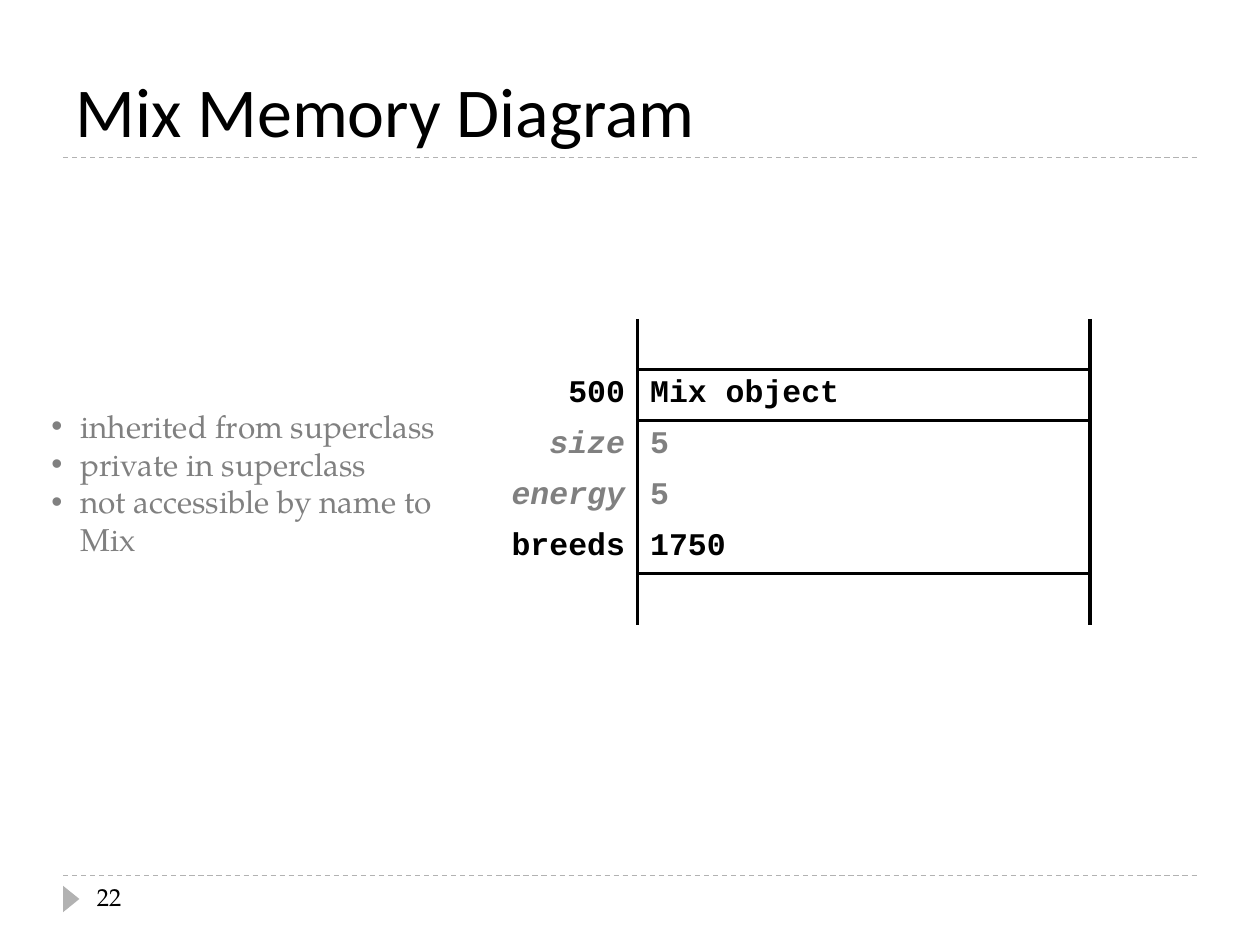
from dataclasses import dataclass

from lxml import etree
from pptx import Presentation
from pptx.dml.color import RGBColor
from pptx.enum.dml import MSO_LINE
from pptx.enum.shapes import MSO_CONNECTOR, MSO_SHAPE
from pptx.enum.text import MSO_ANCHOR, PP_ALIGN
from pptx.oxml.ns import qn
from pptx.util import Inches, Pt

DASH = MSO_LINE.DASH
STRAIGHT = MSO_CONNECTOR.STRAIGHT
TRIANGLE = MSO_SHAPE.ISOSCELES_TRIANGLE
BOTTOM = MSO_ANCHOR.BOTTOM
LEFT, RIGHT = PP_ALIGN.LEFT, PP_ALIGN.RIGHT


@dataclass(frozen=True)
class Theme:
    ink: str = "000000"
    muted: str = "808080"
    rule: str = "B2B2B2"
    heading: str = "Calibri"
    body: str = "TeX Gyre Pagella"
    code: str = "Courier New"
    title_size: int = 40
    text_size: int = 18
    number_size: int = 14
    rule_width: float = 0.75
    border_width: float = 2.25


theme = Theme()


def style(paragraph, face, size, color, bold=False, italic=False):
    for run in paragraph.runs:
        font = run.font
        font.name, font.size = face, Pt(size)
        font.bold, font.italic = bold, italic
        font.color.rgb = RGBColor.from_string(color)


def set_borders(cell, sides):
    properties = cell._tc.get_or_add_tcPr()
    for side in "LRTB":
        border = etree.SubElement(properties, qn(f"a:ln{side}"))
        if side in sides:
            border.set("w", str(Pt(theme.border_width)))
            fill = etree.SubElement(border, qn("a:solidFill"))
            etree.SubElement(fill, qn("a:srgbClr"), val=theme.ink)
        else:
            etree.SubElement(border, qn("a:noFill"))


prs = Presentation()
prs.slide_width, prs.slide_height = Inches(10), Inches(7.5)
slide = prs.slides.add_slide(prs.slide_layouts[5])
shapes = slide.shapes

for y in (6.95, 1.25):
    rule = shapes.add_connector(STRAIGHT, Inches(0.5), Inches(y), Inches(9.5), Inches(y))
    rule.line.color.rgb = RGBColor.from_string(theme.rule)
    rule.line.width = Pt(theme.rule_width)
    rule.line.dash_style = DASH
    etree.SubElement(rule._element.spPr, qn("a:effectLst"))

marker = shapes.add_shape(TRIANGLE, Inches(0.46), Inches(7.07), Inches(0.21), Inches(0.13))
marker.rotation = 90
marker.shadow.inherit = False
marker.fill.solid()
marker.fill.fore_color.rgb = RGBColor.from_string(theme.rule)
marker.line.fill.background()

title = shapes.title
title.left, title.top = Inches(0.5), Inches(0.25)
title.width, title.height = Inches(9), Inches(1)
title.text_frame.text = "Mix Memory Diagram"
title.text_frame.vertical_anchor = BOTTOM
heading = title.text_frame.paragraphs[0]
heading.alignment = LEFT
style(heading, theme.heading, theme.title_size, theme.ink)

page_number = shapes.add_textbox(Inches(0.67), Inches(6.95), Inches(2.17), Inches(0.4))
page_number.text_frame.text = "22"
style(page_number.text_frame.paragraphs[0], theme.body, theme.number_size, theme.ink)

memory_rows = [
    ("", "", theme.ink, False, "LRB"),
    ("500", "Mix object", theme.ink, False, "LRTB"),
    ("size", "5", theme.muted, True, "LRT"),
    ("energy", "5", theme.muted, True, "LR"),
    ("breeds", "1750", theme.ink, False, "LRB"),
    ("", "", theme.ink, False, "LRT"),
]
memory = shapes.add_table(
    len(memory_rows), 2, Inches(3.94), Inches(2.53), Inches(4.71), Inches(2.43)
).table
memory.first_row = memory.horz_banding = False
for column, width in zip(memory.columns, (1.12, 3.59)):
    column.width = Inches(width)
for row, (label, value, color, italic, sides) in zip(memory.rows, memory_rows):
    label_cell, value_cell = row.cells
    for cell, text, slanted, edges, alignment in (
        (label_cell, label, italic, "R", RIGHT),
        (value_cell, value, False, sides, LEFT),
    ):
        cell.text_frame.text = text
        entry = cell.text_frame.paragraphs[0]
        entry.alignment = alignment
        style(entry, theme.code, theme.text_size, color, True, slanted)
        set_borders(cell, edges)
        cell.fill.background()

notes = shapes.add_textbox(Inches(0.31), Inches(3.18), Inches(3.52), Inches(1.01)).text_frame
notes.word_wrap = True
notes.text = "inherited from superclass\nprivate in superclass\nnot accessible by name to Mix"
for note in notes.paragraphs:
    style(note, theme.body, theme.text_size, theme.muted)
    properties = note._p.get_or_add_pPr()
    properties.set("marL", str(Inches(0.23)))
    properties.set("indent", str(-Inches(0.23)))
    etree.SubElement(properties, qn("a:buFont"), typeface="Arial")
    etree.SubElement(properties, qn("a:buChar"), char="•")

prs.save("out.pptx")
